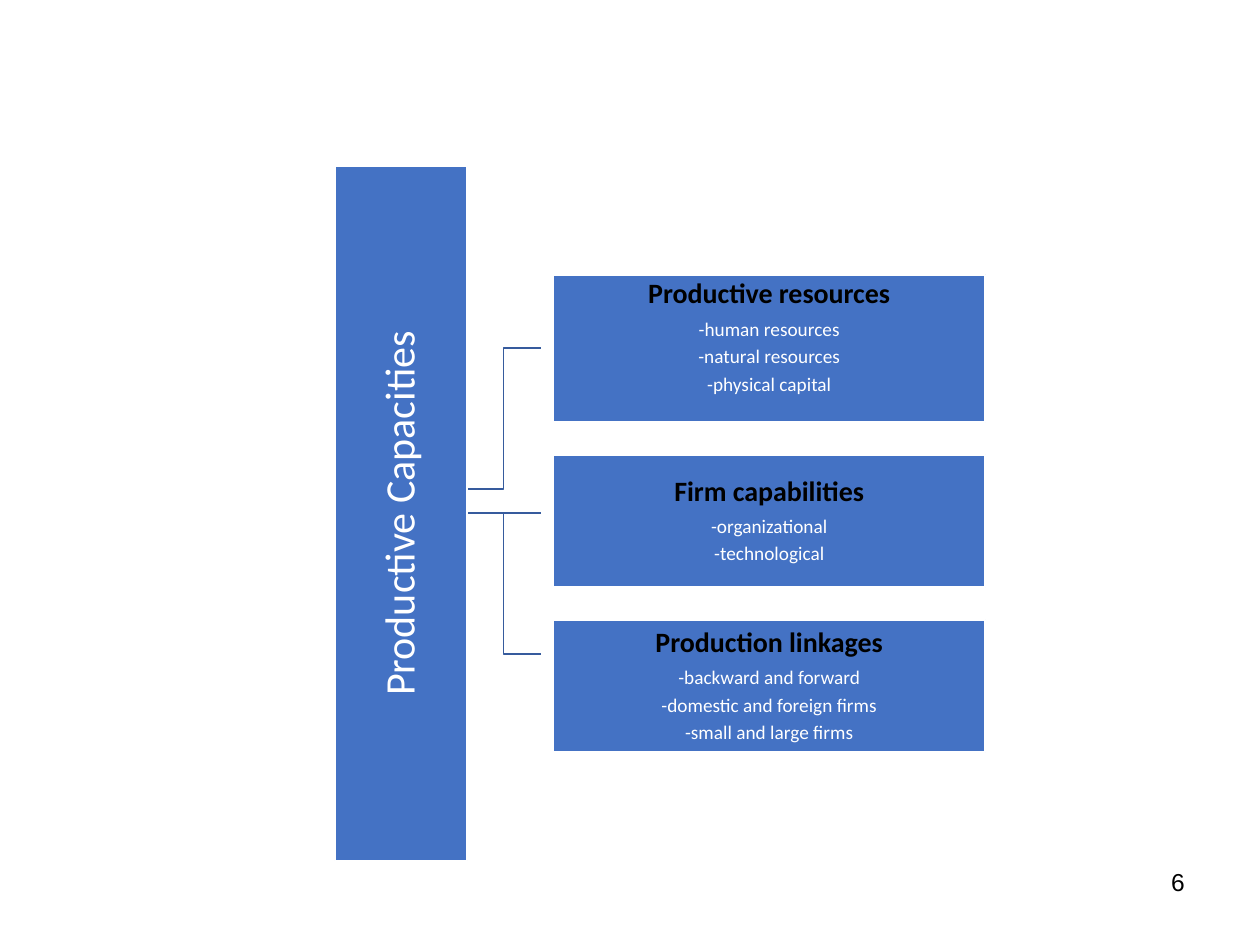
from dataclasses import dataclass

from lxml import etree
from pptx import Presentation
from pptx.dml.color import RGBColor
from pptx.enum import shapes, text
from pptx.oxml import ns
from pptx.util import Pt


@dataclass(frozen=True)
class Theme:
    fill: RGBColor = RGBColor(0x44, 0x72, 0xC4)
    branch: RGBColor = RGBColor(0x36, 0x5B, 0x9D)
    light: RGBColor = RGBColor(0xFF, 0xFF, 0xFF)
    dark: RGBColor = RGBColor(0, 0, 0)
    font: str = "Calibri"
    number_font: str = "Arial"
    root_size: int = 24
    heading_size: int = 16
    item_size: int = 11
    number_size: int = 14


THEME = Theme()

BOX_LEFT, BOX_WIDTH, BOX_GAP = 316.1, 247, 18.7
FIRST_BOX_TOP = 157
# Heading, items, box height, bottom inset
BOXES = [
    ("Productive resources",
     ["-human resources", "-natural resources", "-physical capital"], 84.2, 13),
    ("Firm capabilities", ["-organizational", "-technological"], 75.6, 0.7),
    ("Production linkages",
     ["-backward and forward", "-domestic and foreign firms",
      "-small and large firms"], 75.6, 0.7),
]
BRANCH_LEFT, BRANCH_RIGHT = 266.4, 309
# Start and end height of each branch
BRANCHES = [(293.2, 373.7), (293.2, 293.2), (279.4, 198.7)]


def set_attributes(target, values):
    for name, value in values.items():
        setattr(target, name, value)


def add_line(p, content, size, color, bold=False):
    """Fill a centred paragraph whose space after follows its type size."""
    set_attributes(p, {"alignment": text.PP_ALIGN.CENTER, "line_spacing": 0.9,
                       "space_after": Pt(round(size * 0.35, 1))})
    r = p.add_run()
    r.text = content
    set_attributes(r.font, {"name": THEME.font, "size": Pt(size), "bold": bold})
    r.font.color.rgb = color


def add_block(s, left, top, width, height, inset, bottom):
    """Add a filled rectangle and return it, ready for text."""
    sp = s.shapes.add_shape(shapes.MSO_SHAPE.RECTANGLE,
                            Pt(left), Pt(top), Pt(width), Pt(height))
    sp.shadow.inherit = False
    sp.fill.solid()
    sp.fill.fore_color.rgb = THEME.fill
    sp.line.color.rgb = THEME.light
    sp.line.width = Pt(1)
    set_attributes(sp.text_frame, {
        "word_wrap": True, "vertical_anchor": text.MSO_ANCHOR.MIDDLE,
        "margin_left": Pt(inset), "margin_right": Pt(inset),
        "margin_top": Pt(inset), "margin_bottom": Pt(bottom)})
    return sp


def add_root(s):
    sp = add_block(s, 30.8, 255.6, 396.7, 75.6, 1.4, 1.4)
    sp.rotation = 270
    add_line(sp.text_frame.paragraphs[0], "Productive Capacities",
             THEME.root_size, THEME.light)


def add_boxes(s):
    top = FIRST_BOX_TOP
    for heading, items, height, bottom in BOXES:
        tf = add_block(s, BOX_LEFT, top, BOX_WIDTH, height, 0.7, bottom).text_frame
        add_line(tf.paragraphs[0], heading, THEME.heading_size, THEME.dark, True)
        for item in items:
            add_line(tf.add_paragraph(), item, THEME.item_size, THEME.light)
        top += height + BOX_GAP


def add_branch(s, start, end):
    kind = (shapes.MSO_CONNECTOR.STRAIGHT if start == end
            else shapes.MSO_CONNECTOR.ELBOW)
    branch = s.shapes.add_connector(kind, Pt(BRANCH_LEFT), Pt(start),
                                    Pt(BRANCH_RIGHT), Pt(end))
    branch.line.color.rgb = THEME.branch
    branch.line.width = Pt(1)
    etree.SubElement(branch.element.spPr, ns.qn("a:effectLst"))


def add_page_number(s, number):
    tf = s.shapes.add_textbox(Pt(516), Pt(491.8), Pt(168), Pt(37.4)).text_frame
    tf.word_wrap = True
    p = tf.paragraphs[0]
    p.alignment = text.PP_ALIGN.RIGHT
    r = p.add_run()
    r.text = number
    set_attributes(r.font, {"name": THEME.number_font,
                            "size": Pt(THEME.number_size)})
    r.font.color.rgb = THEME.dark


def main():
    prs = Presentation()
    set_attributes(prs, {"slide_width": Pt(720), "slide_height": Pt(540)})
    s = prs.slides.add_slide(prs.slide_layouts[6])
    add_page_number(s, "6")
    for start, end in BRANCHES:
        add_branch(s, start, end)
    add_root(s)
    add_boxes(s)
    prs.save("out.pptx")


if __name__ == "__main__":
    main()
